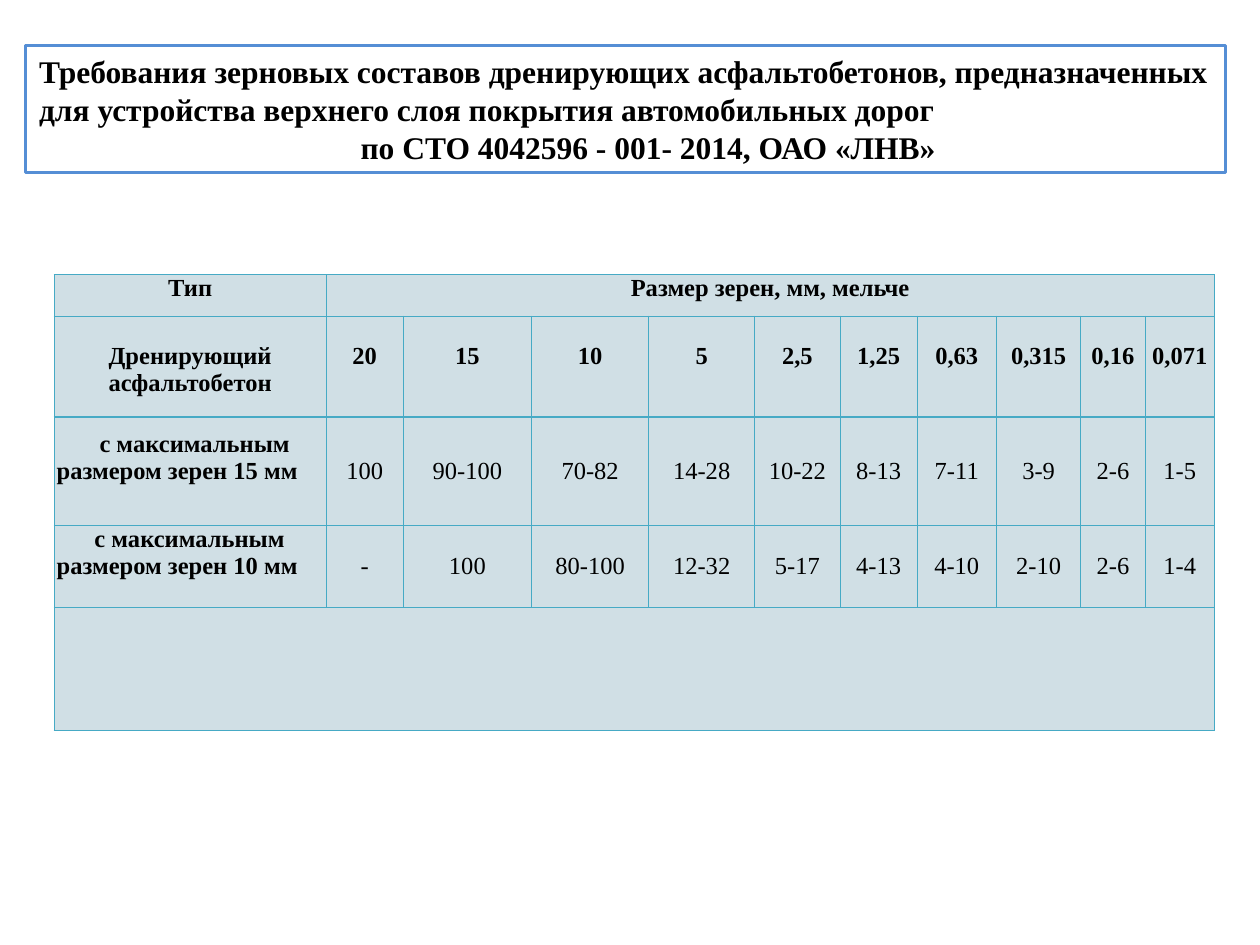
from lxml import etree
from pptx import Presentation
from pptx.dml.color import RGBColor
from pptx.enum.text import MSO_ANCHOR, MSO_AUTO_SIZE, PP_ALIGN
from pptx.oxml.ns import qn
from pptx.util import Inches, Pt

LEFT, CENTER = PP_ALIGN.LEFT, PP_ALIGN.CENTER
TOP, MIDDLE = MSO_ANCHOR.TOP, MSO_ANCHOR.MIDDLE
FONT = "Times New Roman"
COLORS = {"text": "000000", "title_fill": "FFFFFF", "title_line": "558ED5",
          "cell": "D0DFE5", "border": "46AAC5"}


def format_runs(paragraph, size, bold):
    for run in paragraph.runs:
        run.font.name = FONT
        run.font.size = Pt(size)
        run.font.bold = bold
        run.font.color.rgb = RGBColor.from_string(COLORS["text"])


def add_borders(cell):
    properties = cell._tc.get_or_add_tcPr()
    for side in ("a:lnL", "a:lnR", "a:lnT", "a:lnB"):
        line = etree.SubElement(properties, qn(side), w=str(Pt(0.75)))
        fill = etree.SubElement(line, qn("a:solidFill"))
        etree.SubElement(fill, qn("a:srgbClr"), val=COLORS["border"])


presentation = Presentation()
presentation.slide_width = Inches(10)
presentation.slide_height = Inches(7.5)
slide = presentation.slides.add_slide(presentation.slide_layouts[5])

title = slide.shapes.title
title.left, title.top = Inches(0.2), Inches(0.36)
title.width, title.height = Inches(9.53), Inches(1.01)
title.fill.solid()
title.fill.fore_color.rgb = RGBColor.from_string(COLORS["title_fill"])
title.line.color.rgb = RGBColor.from_string(COLORS["title_line"])
title.line.width = Pt(1.75)
title_frame = title.text_frame
title_frame.text = (
    "Требования зерновых составов дренирующих асфальтобетонов, предназначенных "
    "для устройства верхнего слоя покрытия автомобильных дорог\n"
    "по СТО 4042596 - 001- 2014, ОАО «ЛНВ»")
title_frame.word_wrap = True
title_frame.auto_size = MSO_AUTO_SIZE.NONE
title_frame.vertical_anchor = MIDDLE
for paragraph, alignment, indent in zip(title_frame.paragraphs, (LEFT, CENTER), (0.01, 0.36)):
    paragraph.alignment = alignment
    paragraph._p.get_or_add_pPr().set("marL", str(Inches(indent)))
    format_runs(paragraph, 18, True)

rows = [
    ["Тип", "Размер зерен, мм, мельче"] + [""] * 9,
    ["Дренирующий асфальтобетон", "20", "15", "10", "5", "2,5", "1,25", "0,63",
     "0,315", "0,16", "0,071"],
    ["с максимальным размером зерен 15 мм", "100", "90-100", "70-82", "14-28", "10-22",
     "8-13", "7-11", "3-9", "2-6", "1-5"],
    ["с максимальным размером зерен 10 мм", "-", "100", "80-100", "12-32", "5-17",
     "4-13", "4-10", "2-10", "2-6", "1-4"],
    [""] * 11,
]
column_widths = [2.16, 0.61, 1.02, 0.93, 0.84, 0.68, 0.61, 0.63, 0.67, 0.51, 0.55]
row_heights = [0.33, 0.8, 0.86, 0.65, 0.98]
first_line_indents = {2: 0.34, 3: 0.3}

table = slide.shapes.add_table(
    len(rows), len(column_widths), Inches(0.43), Inches(2.18),
    Inches(sum(column_widths)), Inches(sum(row_heights))).table
for column, width in zip(table.columns, column_widths):
    column.width = Inches(width)
for row, height in zip(table.rows, row_heights):
    row.height = Inches(height)

for row_index, values in enumerate(rows):
    for column_index, value in enumerate(values):
        cell = table.cell(row_index, column_index)
        is_grain_label = column_index == 0 and row_index in first_line_indents
        is_value = column_index > 0 and row_index in first_line_indents
        cell.text = value
        cell.margin_left = cell.margin_right = Inches(0.02)
        cell.margin_top = Inches(0.21 if row_index == 1 else 0)
        cell.margin_bottom = Inches(0)
        cell.vertical_anchor = MIDDLE if is_value else TOP
        paragraph = cell.text_frame.paragraphs[0]
        paragraph.alignment = LEFT if is_grain_label else CENTER
        if is_grain_label:
            indent = Inches(first_line_indents[row_index])
            paragraph._p.get_or_add_pPr().set("indent", str(indent))
        format_runs(paragraph, 14, not is_value)
        add_borders(cell)
        cell.fill.solid()
        cell.fill.fore_color.rgb = RGBColor.from_string(COLORS["cell"])

table.cell(2, 0).margin_top = Inches(0.11)
table.cell(0, 1).merge(table.cell(0, 10))
table.cell(4, 0).merge(table.cell(4, 10))

presentation.save("out.pptx")
